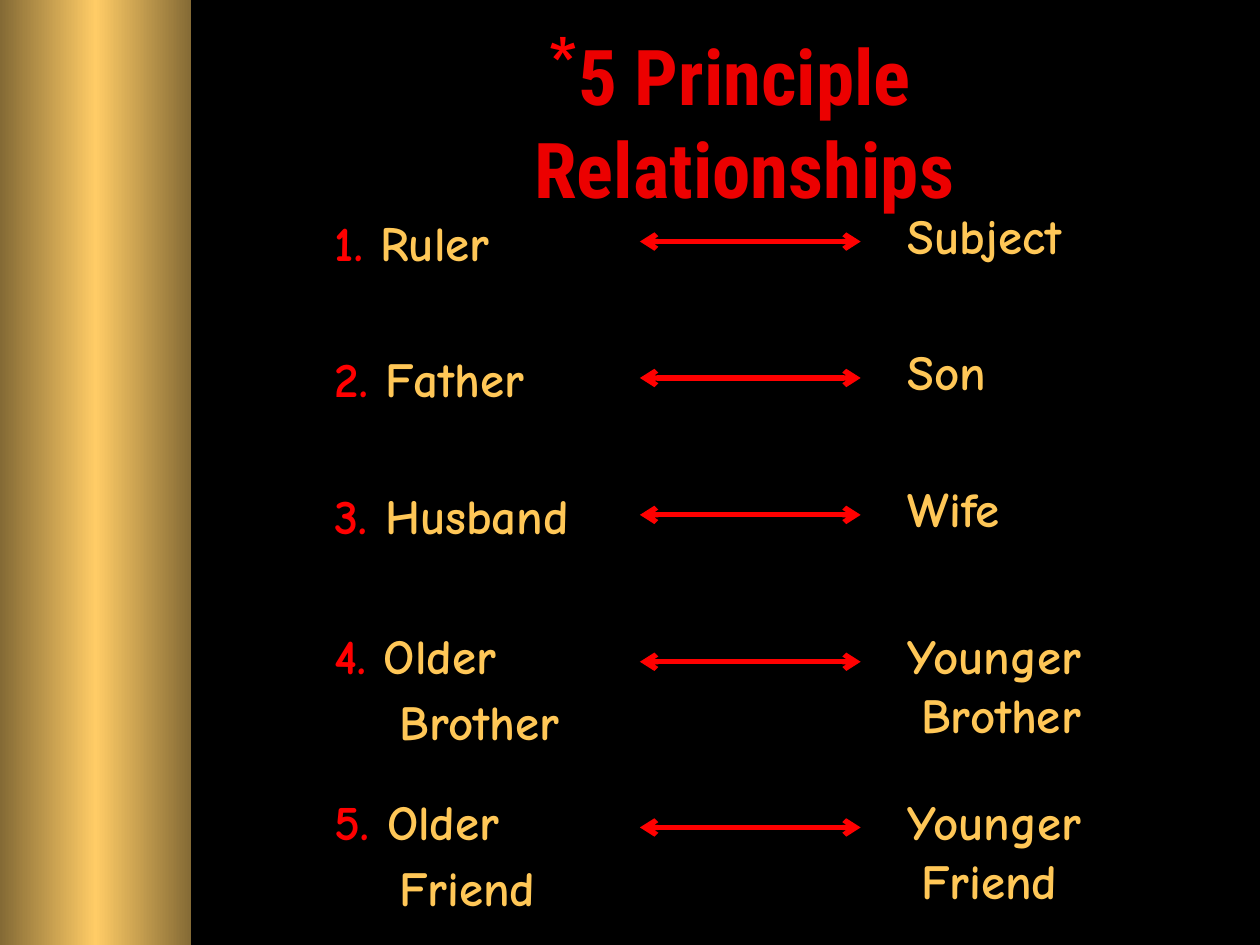
from dataclasses import dataclass

import pptx
import pptx.dml.color
import pptx.enum.shapes
import pptx.enum.text
import pptx.oxml.ns
import pptx.util
from lxml import etree
from pptx.util import Cm

RGB = pptx.dml.color.RGBColor


@dataclass(frozen=True)
class Theme:
    background: str = "000000"
    title: str = "EC0000"
    accent: str = "FF0000"
    text: str = "FFC757"
    band_edge: str = "846A35"
    band_middle: str = "FFCC66"
    title_font: str = "Roboto Condensed"
    text_font: str = "Comic Neue"
    title_size: int = 44
    text_size: int = 28
    spacer_size: int = 32
    arrow_width: int = 3


@dataclass(frozen=True)
class Relationship:
    top: float
    senior: tuple[str, ...]
    junior: tuple[str, ...]


THEME = Theme()
RELATIONSHIPS = (
    Relationship(4.02, ("Ruler",), ("Subject",)),
    Relationship(6.77, ("Father",), ("Son",)),
    Relationship(9.53, ("Husband",), ("Wife",)),
    Relationship(12.49, ("Older", "Brother"), ("Younger", "Brother")),
    Relationship(15.83, ("Older", "Friend"), ("Younger", "Friend")),
)
SENIOR_LEFT, ARROW_LEFT, JUNIOR_LEFT = 6.15, 12.9, 17.35
ROLE_WIDTH, LINE_HEIGHT, ARROW_DROP = 6.55, 1.19, 0.85


def add_child(parent, tag: str, **attributes: str):
    return etree.SubElement(parent, pptx.oxml.ns.qn(tag), **attributes)


def style_run(run, font: str, size: int, color: str) -> None:
    run.font.name = font
    run.font.size = pptx.util.Pt(size)
    run.font.bold = True
    run.font.color.rgb = RGB.from_string(color)


def add_words(paragraph, words: str, color: str, size: int = THEME.text_size) -> None:
    run = paragraph.add_run()
    run.text = words
    style_run(run, THEME.text_font, size, color)


def add_role(slide, left: float, top: float, lines: tuple[str, ...],
             margin: float, indent: float, number: str = "") -> None:
    role = slide.shapes.add_textbox(
        Cm(left), Cm(top), Cm(ROLE_WIDTH), Cm(0.25 + LINE_HEIGHT * len(lines)))
    role.text_frame.word_wrap = True
    paragraph = role.text_frame.paragraphs[0]
    properties = paragraph._p.get_or_add_pPr()
    properties.set("marL", str(Cm(margin)))
    properties.set("indent", str(Cm(indent)))
    if number:
        add_words(paragraph, number, THEME.accent)
    for index, line in enumerate(lines):
        if index:
            paragraph.add_line_break()
        lead = " " if number and not index else ""
        add_words(paragraph, lead + line, THEME.text)
    if number:
        add_words(paragraph, " ", THEME.text, THEME.spacer_size)


def add_arrow(slide, y: float) -> None:
    arrow = slide.shapes.add_connector(
        pptx.enum.shapes.MSO_CONNECTOR.STRAIGHT,
        Cm(ARROW_LEFT), Cm(y), Cm(JUNIOR_LEFT), Cm(y))
    arrow.line.color.rgb = RGB.from_string(THEME.accent)
    arrow.line.width = pptx.util.Pt(THEME.arrow_width)
    line = arrow.line._get_or_add_ln()
    for end in ("a:headEnd", "a:tailEnd"):
        add_child(line, end, type="arrow")
    add_child(arrow._element.spPr, "a:effectLst")


def add_band(slide, height: int) -> None:
    band = slide.shapes.add_shape(
        pptx.enum.shapes.MSO_SHAPE.RECTANGLE, 0, 0, Cm(3.86), height)
    band.shadow.inherit = False
    band.line.fill.background()
    band.fill.gradient()
    band.fill.gradient_angle = 0
    stops = band._element.spPr.find(".//" + pptx.oxml.ns.qn("a:gsLst"))
    for stop in list(stops):
        stops.remove(stop)
    colors = (THEME.band_edge, THEME.band_middle, THEME.band_edge)
    for index, color in enumerate(colors):
        stop = add_child(stops, "a:gs", pos=str(index * 50000))
        add_child(stop, "a:srgbClr", val=color)


def set_title(slide) -> None:
    title = slide.shapes.title
    title.left, title.top, title.width, title.height = (
        Cm(6.99), Cm(1.27), Cm(15.44), Cm(2.34))
    frame = title.text_frame
    frame.text = "5 Principle Relationships"
    frame.word_wrap = False
    frame.vertical_anchor = pptx.enum.text.MSO_ANCHOR.MIDDLE
    paragraph = frame.paragraphs[0]
    paragraph.alignment = pptx.enum.text.PP_ALIGN.CENTER
    properties = paragraph._p.get_or_add_pPr()
    bullet_color = add_child(properties, "a:buClr")
    add_child(bullet_color, "a:srgbClr", val=THEME.accent)
    add_child(properties, "a:buChar", char="*")
    style_run(paragraph.runs[0], THEME.title_font, THEME.title_size, THEME.title)


def main() -> None:
    deck = pptx.Presentation()
    deck.slide_width, deck.slide_height = Cm(25.4), Cm(19.05)
    slide = deck.slides.add_slide(deck.slide_layouts.get_by_name("Title Only"))
    slide.background.fill.solid()
    slide.background.fill.fore_color.rgb = RGB.from_string(THEME.background)
    add_band(slide, deck.slide_height)
    set_title(slide)
    for number, pair in enumerate(RELATIONSHIPS, start=1):
        add_role(slide, SENIOR_LEFT, pair.top, pair.senior, 1.65, -1.3, f"{number}.")
        add_arrow(slide, pair.top + ARROW_DROP)
        add_role(slide, JUNIOR_LEFT, pair.top, pair.junior, 0.97, -0.27)
    deck.save("out.pptx")


if __name__ == "__main__":
    main()
